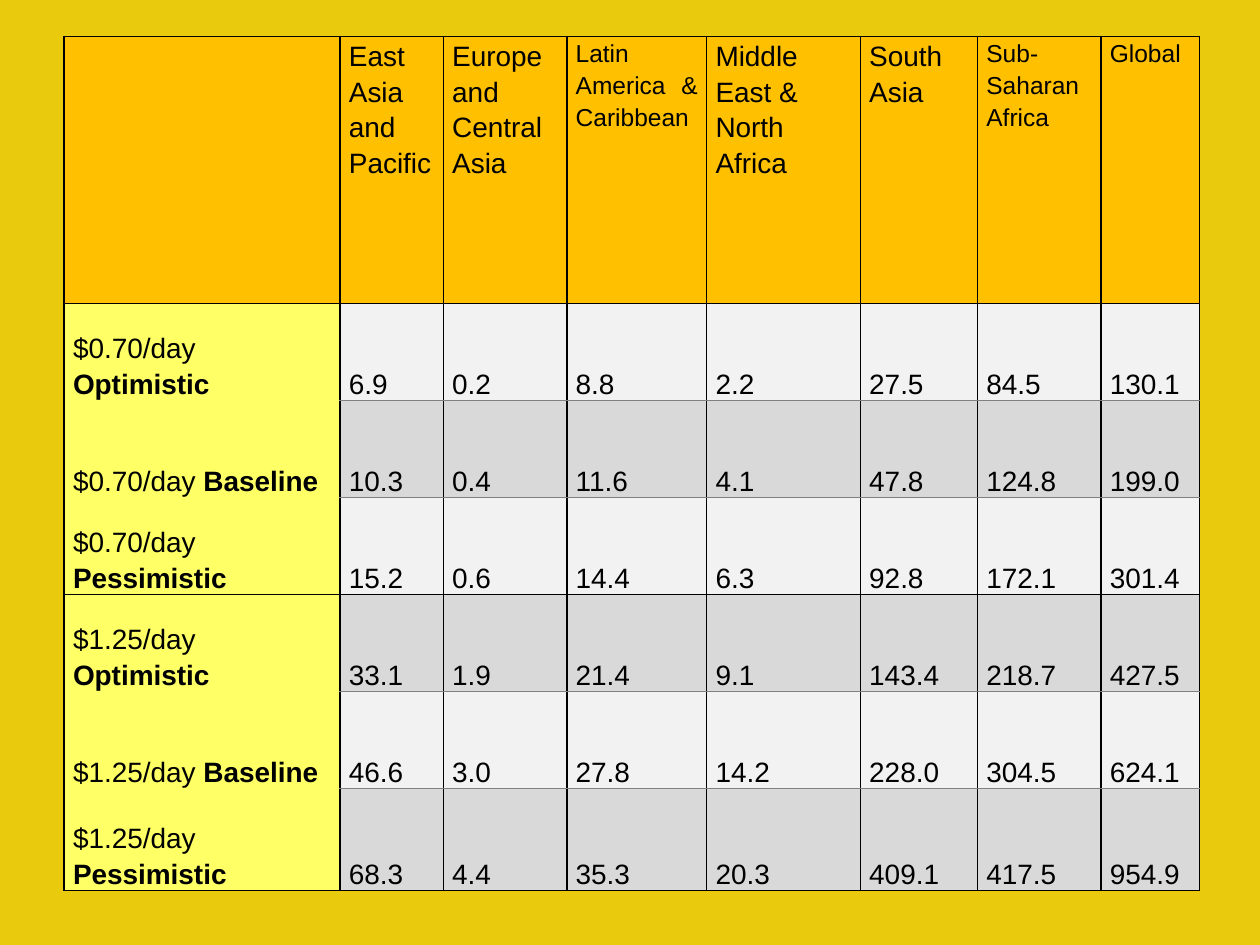
from pptx import Presentation
from pptx.dml.color import RGBColor
from pptx.enum.text import MSO_ANCHOR, PP_ALIGN
from pptx.oxml.ns import qn
from pptx.util import Inches, Pt
from lxml import etree

JUSTIFY = PP_ALIGN.JUSTIFY
TOP, BOTTOM = MSO_ANCHOR.TOP, MSO_ANCHOR.BOTTOM
GOLD = RGBColor(0xEA, 0xCA, 0x0C)
ORANGE = RGBColor(0xFF, 0xC0, 0x00)
YELLOW = RGBColor(0xFF, 0xFF, 0x66)
LIGHT = RGBColor(0xF2, 0xF2, 0xF2)
DARK = RGBColor(0xD9, 0xD9, 0xD9)
BLACK = RGBColor(0x00, 0x00, 0x00)
GRAY = RGBColor(0x80, 0x80, 0x80)

COLUMN_WIDTHS = [2.19, 0.82, 0.98, 1.11, 1.22, 0.93, 0.98, 0.78]
ROW_HEIGHTS = [2.12, 0.77, 0.77, 0.77, 0.77, 0.77, 0.81]
REGIONS = [
    ("East Asia and Pacific", 16),
    ("Europe and Central Asia", 16),
    ("Latin America & Caribbean", 14),
    ("Middle East & \nNorth Africa", 16),
    ("South Asia", 16),
    ("Sub-Saharan Africa", 14),
    ("Global", 14),
]
SCENARIOS = [
    ("$0.70/day ", "Optimistic", ["6.9", "0.2", "8.8", "2.2", "27.5", "84.5", "130.1"]),
    ("$0.70/day ", "Baseline", ["10.3", "0.4", "11.6", "4.1", "47.8", "124.8", "199.0"]),
    ("$0.70/day ", "Pessimistic", ["15.2", "0.6", "14.4", "6.3", "92.8", "172.1", "301.4"]),
    ("$1.25/day ", "Optimistic", ["33.1", "1.9", "21.4", "9.1", "143.4", "218.7", "427.5"]),
    ("$1.25/day ", "Baseline", ["46.6", "3.0", "27.8", "14.2", "228.0", "304.5", "624.1"]),
    ("$1.25/day ", "Pessimistic", ["68.3", "4.4", "35.3", "20.3", "409.1", "417.5", "954.9"]),
]


def write_text(cell, text, bold_text="", size=16, anchor=BOTTOM):
    cell.vertical_anchor = anchor
    cell.margin_left = cell.margin_right = Inches(0.07)
    cell.margin_top = cell.margin_bottom = 0
    cell.text = text
    if bold_text:
        cell.text_frame.paragraphs[-1].add_run().text = bold_text
    for paragraph in cell.text_frame.paragraphs:
        paragraph.alignment = JUSTIFY
        paragraph.line_spacing = 1.15
        for run in paragraph.runs:
            run.font.name = "Arial"
            run.font.size = Pt(size)
            run.font.bold = run.text == bold_text
            run.font.color.rgb = BLACK


def style_cell(cell, fill, above, below):
    properties = cell._tc.get_or_add_tcPr()
    for side, color in (("L", BLACK), ("R", BLACK), ("T", above), ("B", below)):
        line = etree.SubElement(properties, qn(f"a:ln{side}"), w=str(Pt(1)))
        if color is None:
            etree.SubElement(line, qn("a:noFill"))
        else:
            solid = etree.SubElement(line, qn("a:solidFill"))
            etree.SubElement(solid, qn("a:srgbClr"), val=str(color))
    cell.fill.solid()
    cell.fill.fore_color.rgb = fill


presentation = Presentation()
presentation.slide_width = Inches(10)
presentation.slide_height = Inches(7.5)
slide = presentation.slides.add_slide(presentation.slide_layouts[6])
slide.background.fill.solid()
slide.background.fill.fore_color.rgb = GOLD

poverty_table = slide.shapes.add_table(
    len(ROW_HEIGHTS), len(COLUMN_WIDTHS),
    Inches(0.51), Inches(0.29), Inches(9), Inches(6.77),
).table
for column, width in zip(poverty_table.columns, COLUMN_WIDTHS):
    column.width = Inches(width)
for row, height in zip(poverty_table.rows, ROW_HEIGHTS):
    row.height = Inches(height)

for column_index in range(len(COLUMN_WIDTHS)):
    style_cell(poverty_table.cell(0, column_index), ORANGE, BLACK, BLACK)
for column_index, (region, size) in enumerate(REGIONS, start=1):
    write_text(poverty_table.cell(0, column_index), region, size=size, anchor=TOP)

for row_index, (poverty_line, scenario, counts) in enumerate(SCENARIOS, start=1):
    starts_group = row_index % 3 == 1
    ends_group = row_index % 3 == 0
    label_cell = poverty_table.cell(row_index, 0)
    write_text(label_cell, poverty_line, bold_text=scenario)
    style_cell(label_cell, YELLOW, BLACK if starts_group else None, BLACK if ends_group else None)
    band = LIGHT if row_index % 2 else DARK
    for column_index, count in enumerate(counts, start=1):
        count_cell = poverty_table.cell(row_index, column_index)
        write_text(count_cell, count)
        style_cell(count_cell, band, BLACK if starts_group else GRAY, BLACK if ends_group else GRAY)

presentation.save("out.pptx")
